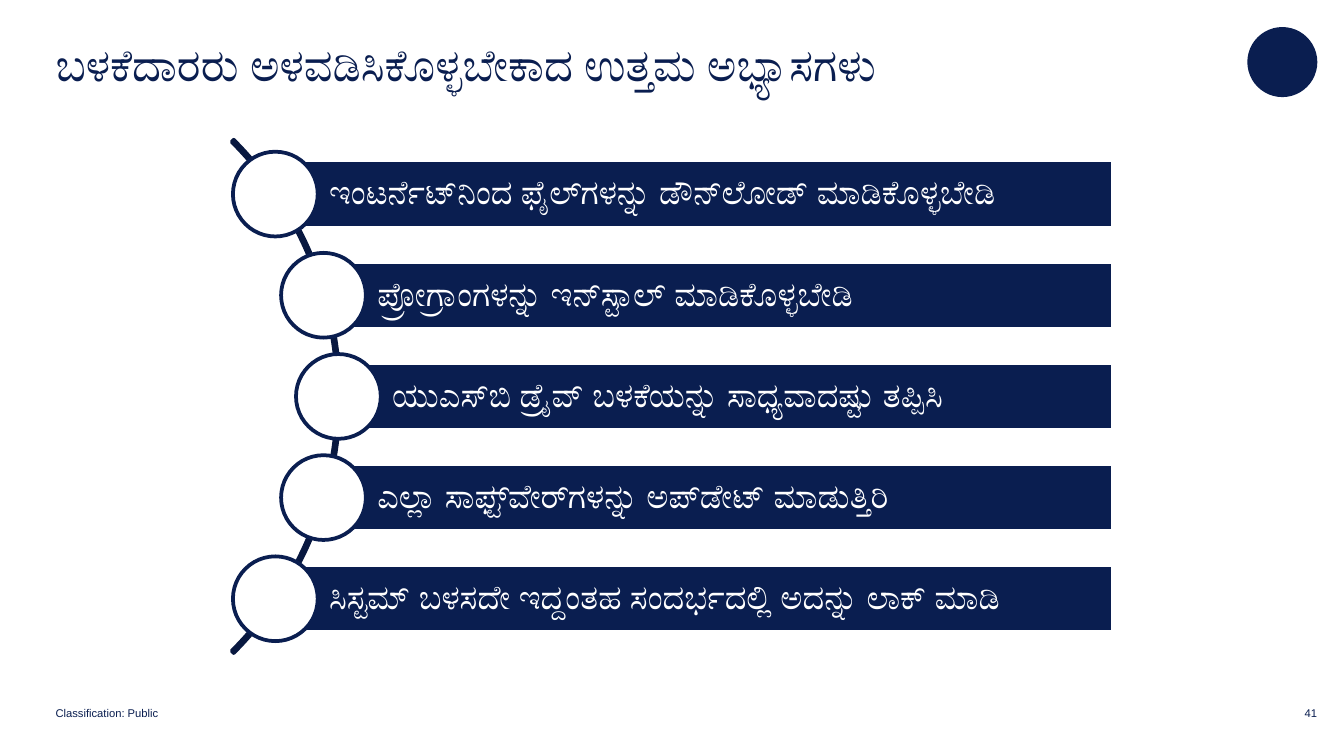
from typing import NamedTuple

from pptx import Presentation
from pptx.dml.color import RGBColor
from pptx.enum.shapes import MSO_SHAPE
from pptx.enum.text import MSO_ANCHOR, MSO_AUTO_SIZE, PP_ALIGN
from pptx.util import Pt

OVAL, RECTANGLE, BLOCK_ARC = MSO_SHAPE.OVAL, MSO_SHAPE.RECTANGLE, MSO_SHAPE.BLOCK_ARC
MIDDLE, TOP = MSO_ANCHOR.MIDDLE, MSO_ANCHOR.TOP
NO_AUTOFIT = MSO_AUTO_SIZE.NONE
LEFT, RIGHT = PP_ALIGN.LEFT, PP_ALIGN.RIGHT

COLORS = {"navy": "0A1E50", "arc": "081840", "white": "FFFFFF"}
FONT = "Arial"
# Zero-width joiner and non-joiner, which shape the Kannada loanwords
ZWJ, ZWNJ = chr(0x200D), chr(0x200C)

BAR_RIGHT, BAR_HEIGHT = 596.2, 36
NODE_SIZE = 45.4
CENTER_Y, PITCH = 212.4, 54.2
ARC_CENTER_X, ARC_SIZE = -12.24, 388.8
ARC_ADJUSTMENTS = (189, 27, 0.004)


class Box(NamedTuple):
    left: float
    top: float
    width: float
    height: float


class Practice(NamedTuple):
    bar_left: float
    label: str


class FooterItem(NamedTuple):
    box: Box
    label: str
    align: PP_ALIGN


PRACTICES = (
    Practice(147.5, f"ಇಂಟರ್ನೆಟ್{ZWJ}ನಿಂದ ಫೈಲ್{ZWJ}ಗಳನ್ನು ಡೌನ್{ZWJ}ಲೋಡ್ ಮಾಡಿಕೊಳ್ಳಬೇಡಿ"),
    Practice(173.3, f"ಪ್ರೋಗ್ರಾಂಗಳನ್ನು ಇನ್{ZWJ}ಸ್ಟಾಲ್ ಮಾಡಿಕೊಳ್ಳಬೇಡಿ"),
    Practice(181.3, f"ಯುಎಸ್{ZWJ}ಬಿ ಡ್ರೈವ್ ಬಳಕೆಯನ್ನು ಸಾಧ್ಯವಾದಷ್ಟು ತಪ್ಪಿಸಿ"),
    Practice(173.3, f"ಎಲ್ಲಾ ಸಾಫ್ಟ್{ZWNJ}ವೇರ್{ZWNJ}ಗಳನ್ನು ಅಪ್{ZWJ}ಡೇಟ್ ಮಾಡುತ್ತಿರಿ"),
    Practice(147.5, "ಸಿಸ್ಟಮ್ ಬಳಸದೇ ಇದ್ದಂತಹ ಸಂದರ್ಭದಲ್ಲಿ ಅದನ್ನು ಲಾಕ್ ಮಾಡಿ"),
)
FOOTER = (
    FooterItem(Box(29.8, 379.6, 80, 7), "Classification: Public", LEFT),
    FooterItem(Box(675.6, 379.6, 30, 7), "41", RIGHT),
)


def rgb(color: str) -> RGBColor:
    return RGBColor.from_string(COLORS[color])


def points(box: Box) -> list[Pt]:
    return [Pt(value) for value in box]


def write(shape, label: str, size: float, color: str, insets=(0, 0, 0, 0),
          anchor=MIDDLE, align=LEFT, line_spacing=1.0) -> None:
    frame = shape.text_frame
    frame.text = label
    paragraph = frame.paragraphs[0]
    left, top, right, bottom = (Pt(inset) for inset in insets)
    formats = (
        (frame, {"margin_left": left, "margin_top": top, "margin_right": right,
                 "margin_bottom": bottom, "word_wrap": True,
                 "auto_size": NO_AUTOFIT, "vertical_anchor": anchor}),
        (paragraph, {"alignment": align, "line_spacing": line_spacing}),
        (paragraph.font, {"name": FONT, "size": Pt(size)}),
    )
    for target, values in formats:
        for attribute, value in values.items():
            setattr(target, attribute, value)
    paragraph.font.color.rgb = rgb(color)


def add_figure(slide, kind: MSO_SHAPE, box: Box, fill: str | None, line: str | None):
    """Add a shadowless preset shape; None leaves out its fill or line."""
    figure = slide.shapes.add_shape(kind, *points(box))
    figure.shadow.inherit = False
    if fill:
        figure.fill.solid()
        figure.fill.fore_color.rgb = rgb(fill)
    else:
        figure.fill.background()
    if line:
        figure.line.color.rgb = rgb(line)
        figure.line.width = Pt(2)
    else:
        figure.line.fill.background()
    return figure


def add_title(slide, label: str) -> None:
    title = slide.shapes.title
    title.left, title.top, title.width, title.height = points(Box(29.8, 13, 631.4, 42.5))
    write(title, label, 24, "navy")


def add_arc(slide) -> None:
    radius = ARC_SIZE / 2
    box = Box(ARC_CENTER_X - radius, CENTER_Y - radius, ARC_SIZE, ARC_SIZE)
    arc = add_figure(slide, BLOCK_ARC, box, None, "arc")
    for index, value in enumerate(ARC_ADJUSTMENTS):
        arc.adjustments[index] = value


def add_practice(slide, practice: Practice, center_y: float) -> None:
    """Add a labelled bar with a round node centred on its left edge."""
    left = practice.bar_left
    bar_box = Box(left, center_y - BAR_HEIGHT / 2, BAR_RIGHT - left, BAR_HEIGHT)
    bar = add_figure(slide, RECTANGLE, bar_box, "navy", "white")
    write(bar, practice.label, 18, "white", insets=(28.8, 3.6, 3.6, 3.6), line_spacing=0.9)
    radius = NODE_SIZE / 2
    node_box = Box(left - radius, center_y - radius, NODE_SIZE, NODE_SIZE)
    add_figure(slide, OVAL, node_box, "white", "navy")


def add_footer_item(slide, item: FooterItem) -> None:
    textbox = slide.shapes.add_textbox(*points(item.box))
    write(textbox, item.label, 6, "navy", anchor=TOP, align=item.align, line_spacing=0.85)


def main() -> None:
    presentation = Presentation()
    presentation.slide_width, presentation.slide_height = Pt(720), Pt(405)
    title_only = presentation.slide_layouts[5]
    slide = presentation.slides.add_slide(title_only)

    add_title(slide, "ಬಳಕೆದಾರರು ಅಳವಡಿಸಿಕೊಳ್ಳಬೇಕಾದ ಉತ್ತಮ ಅಭ್ಯಾಸಗಳು")
    add_figure(slide, OVAL, Box(668.2, 14.5, 37.5, 37.5), "navy", None)
    for item in FOOTER:
        add_footer_item(slide, item)

    add_arc(slide)
    first_center = CENTER_Y - PITCH * (len(PRACTICES) - 1) / 2
    for index, practice in enumerate(PRACTICES):
        add_practice(slide, practice, first_center + index * PITCH)

    presentation.save("out.pptx")


if __name__ == "__main__":
    main()
